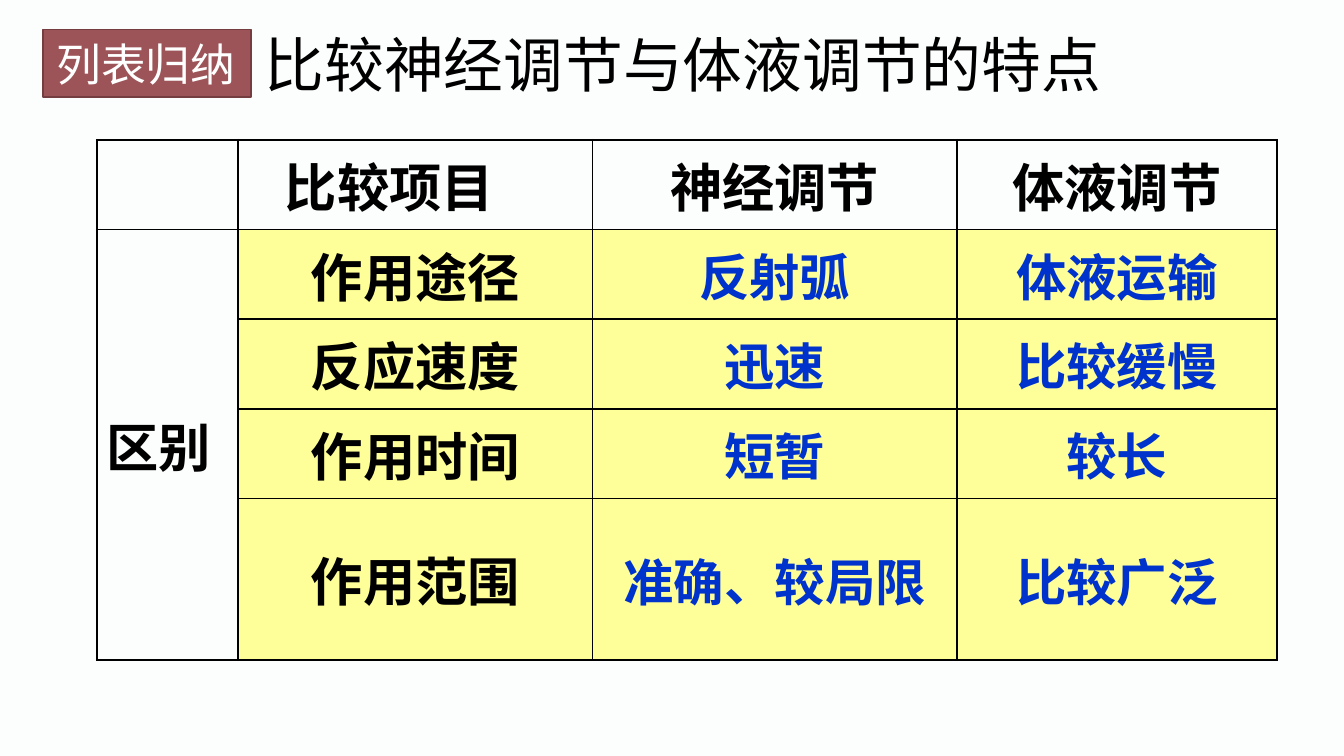
from lxml import etree
from pptx import Presentation
from pptx.dml.color import RGBColor
from pptx.enum.shapes import MSO_SHAPE
from pptx.enum.text import MSO_ANCHOR, MSO_AUTO_SIZE, PP_ALIGN
from pptx.oxml import parse_xml
from pptx.oxml.ns import nsdecls, qn
from pptx.util import Inches, Pt

RECTANGLE = MSO_SHAPE.RECTANGLE
MIDDLE = MSO_ANCHOR.MIDDLE
FIT_SHAPE = MSO_AUTO_SIZE.SHAPE_TO_FIT_TEXT
LEFT, CENTER = PP_ALIGN.LEFT, PP_ALIGN.CENTER

FONT = "Noto Sans CJK SC"
COLORS = {
    "background": "FCFDFD",
    "badge": "9D5458",
    "badge_line": "743E41",
    "badge_text": "FFFFFF",
    "text": "000000",
    "answer": "0033CC",
    "highlight": "FFFF99",
    "border": "000000",
}

BADGE = "列表归纳"
TITLE = "比较神经调节与体液调节的特点"
ROWS = [
    ["", "比较项目　", "神经调节", "体液调节"],
    ["区别", "作用途径", "反射弧", "体液运输"],
    ["", "反应速度", "迅速", "比较缓慢"],
    ["", "作用时间", "短暂", "较长"],
    ["", "作用范围", "准确、较局限", "比较广泛"],
]
COLUMN_WIDTHS = [1.05, 2.64, 2.71, 2.38]
TABLE_HEIGHT = 3.87
LAST_ROW_HEIGHT = 1.2


def color(name):
    return RGBColor.from_string(COLORS[name])


def format_text(frame, size, color_name, bold=False, align=LEFT):
    for para in frame.paragraphs:
        para.alignment = align
        for span in para.runs:
            span.font.size = Pt(size)
            span.font.bold = bold
            span.font.color.rgb = color(color_name)
            span.font.name = FONT
            east_asian = etree.SubElement(span.font._element, qn("a:ea"))
            east_asian.set("typeface", FONT)


def fill_label(shape, text, size, color_name):
    """Put one unwrapped line of text in a box or shape."""
    frame = shape.text_frame
    frame.text = text
    frame.word_wrap = False
    frame.auto_size = FIT_SHAPE
    format_text(frame, size, color_name)


def add_borders(cell):
    properties = cell._tc.get_or_add_tcPr()
    for position, side in enumerate(("lnL", "lnR", "lnT", "lnB")):
        line = parse_xml(
            f'<a:{side} {nsdecls("a")} w="{Pt(1)}"><a:solidFill>'
            f'<a:srgbClr val="{COLORS["border"]}"/></a:solidFill></a:{side}>'
        )
        properties.insert(position, line)


def add_comparison(slide):
    frame = slide.shapes.add_table(
        len(ROWS), len(COLUMN_WIDTHS), Inches(0.72), Inches(1.04),
        Inches(sum(COLUMN_WIDTHS)), Inches(TABLE_HEIGHT),
    )
    table = frame.table
    table.first_row = table.horz_banding = False
    for column, width in zip(table.columns, COLUMN_WIDTHS):
        column.width = Inches(width)
    row_height = (TABLE_HEIGHT - LAST_ROW_HEIGHT) / (len(ROWS) - 1)
    for row in table.rows:
        row.height = Inches(row_height)
    table.rows[len(ROWS) - 1].height = Inches(LAST_ROW_HEIGHT)

    for r, texts in enumerate(ROWS):
        for c, text in enumerate(texts):
            cell = table.cell(r, c)
            cell.vertical_anchor = MIDDLE
            cell.margin_left = cell.margin_right = Inches(0.07)
            cell.margin_top = cell.margin_bottom = Inches(0.04)
            if r and c:
                cell.fill.solid()
                cell.fill.fore_color.rgb = color("highlight")
            else:
                cell.fill.background()
            add_borders(cell)
            cell.text_frame.text = text
            is_answer = r > 0 and c > 1
            format_text(
                cell.text_frame,
                27 if is_answer else 28,
                "answer" if is_answer else "text",
                bold=True,
                align=CENTER if c else LEFT,
            )
    table.cell(1, 0).merge(table.cell(len(ROWS) - 1, 0))


def main():
    deck = Presentation()
    deck.slide_width = Inches(10)
    deck.slide_height = deck.slide_width * 9 // 16
    slide = deck.slides.add_slide(deck.slide_layouts[6])
    slide.background.fill.solid()
    slide.background.fill.fore_color.rgb = color("background")

    add_comparison(slide)

    title = slide.shapes.add_textbox(
        Inches(1.87), Inches(0.16), Inches(6.48), Inches(0.64))
    fill_label(title, TITLE, 32, "text")

    badge = slide.shapes.add_shape(
        RECTANGLE, Inches(0.32), Inches(0.22), Inches(1.55), Inches(0.5))
    badge.shadow.inherit = False
    badge.fill.solid()
    badge.fill.fore_color.rgb = color("badge")
    badge.line.color.rgb = color("badge_line")
    badge.line.width = Pt(1)
    fill_label(badge, BADGE, 24, "badge_text")
    badge.text_frame.vertical_anchor = MIDDLE

    deck.save("out.pptx")


if __name__ == "__main__":
    main()
